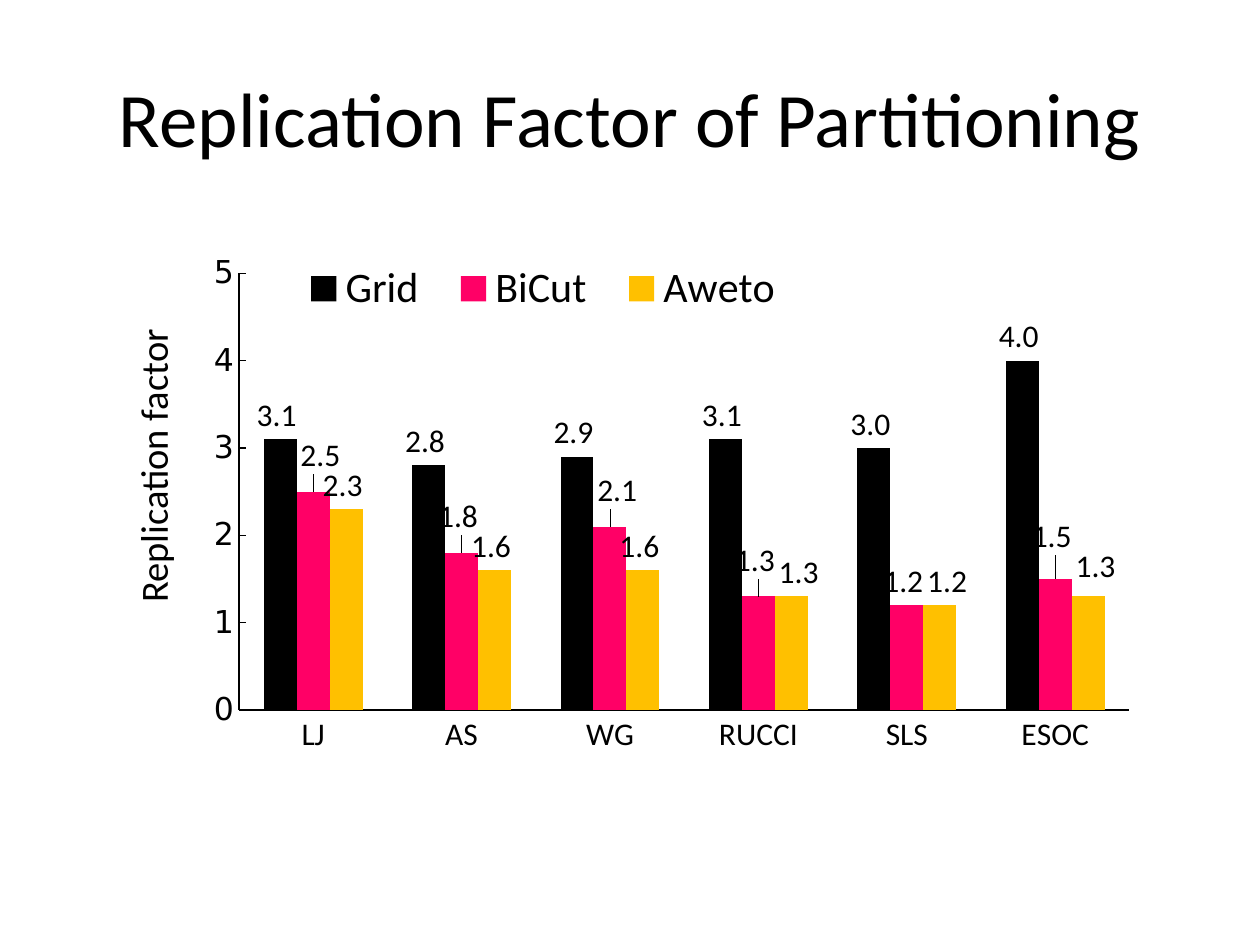
from dataclasses import dataclass
from lxml.etree import SubElement
from pptx import Presentation
from pptx.chart.data import CategoryChartData
from pptx.dml.color import RGBColor
from pptx.enum.chart import XL_CHART_TYPE, XL_LABEL_POSITION, XL_LEGEND_POSITION, XL_TICK_MARK
from pptx.enum.text import MSO_ANCHOR, PP_ALIGN
from pptx.oxml import parse_xml
from pptx.oxml.ns import nsdecls, qn
from pptx.util import Inches, Pt


@dataclass(frozen=True)
class Theme:
    font: str = "Calibri"
    number_font: str = "DejaVu Sans"
    ink: RGBColor = RGBColor(0, 0, 0)
    pink: RGBColor = RGBColor(0xFF, 0x00, 0x66)
    amber: RGBColor = RGBColor(0xFF, 0xC0, 0x00)
    title: int = 44
    legend: int = 24
    axis_title: int = 22
    label: int = 18


THEME = Theme()
GRAPHS = ["LJ", "AS", "WG", "RUCCI", "SLS", "ESOC"]
# Name, colour, values, and label shifts by point as shares of the chart
SERIES = [
    ("Grid", THEME.ink, [3.1, 2.8, 2.9, 3.1, 3.0, 4.0], {}),
    ("BiCut", THEME.pink, [2.5, 1.8, 2.1, 1.3, 1.2, 1.5],
     {0: (0.01, -0.02), 1: (0, -0.02), 2: (0.01, -0.02), 3: (0, -0.02), 5: (0, -0.03)}),
    ("Aweto", THEME.amber, [2.3, 1.6, 1.6, 1.3, 1.2, 1.3],
     {3: (0.01, 0), 4: (0.01, 0), 5: (0.01, -0.01)}),
]


def style_font(font, size, name=THEME.font):
    font.name, font.size, font.bold = name, Pt(size), False
    font.color.rgb = THEME.ink


def make_layout(**settings):
    """Build a manual chart layout from its settings, in schema order."""
    layout = parse_xml(f"<c:layout {nsdecls('c')}/>")
    manual = SubElement(layout, qn("c:manualLayout"))
    for tag, value in settings.items():
        SubElement(manual, qn(f"c:{tag}")).set("val", str(value))
    return layout


def place(element, layout, before):
    """Put the layout in front of the first child with one of the given tags."""
    for old in element.findall(qn("c:layout")):
        element.remove(old)
    next(child for child in element if child.tag in map(qn, before)).addprevious(layout)


def add_title(page, text):
    box = page.shapes.add_textbox(Inches(0.5), Inches(0.3), Inches(9), Inches(1.25))
    frame = box.text_frame
    frame.word_wrap = True
    frame.vertical_anchor = MSO_ANCHOR.MIDDLE
    para = frame.paragraphs[0]
    para.text = text
    para.alignment = PP_ALIGN.CENTER
    style_font(para.font, THEME.title)


def style_axis(axis, tick, font_name):
    axis.has_major_gridlines = False
    axis.major_tick_mark = tick
    axis.minor_tick_mark = XL_TICK_MARK.NONE
    axis.format.line.color.rgb = THEME.ink
    axis.format.line.width = Pt(0.75)
    style_font(axis.tick_labels.font, THEME.label, font_name)


def style_value_axis(axis):
    style_axis(axis, XL_TICK_MARK.INSIDE, THEME.number_font)
    axis.minimum_scale, axis.maximum_scale, axis.major_unit = 0, 5, 1
    para = axis.axis_title.text_frame.paragraphs[0]
    para.text = "Replication factor"
    style_font(para.font, THEME.axis_title)
    place(axis.axis_title._element,
          make_layout(xMode="edge", yMode="edge", x=0.03, y=0.16), ["c:overlay"])


def style_series(series, color, shifts):
    series.format.fill.solid()
    series.format.fill.fore_color.rgb = color
    labels = series.data_labels
    labels.show_value = True
    labels.number_format = r"#,##0.0_);[Red]\(#,##0.0\)"
    labels.number_format_is_linked = False
    labels.position = XL_LABEL_POSITION.OUTSIDE_END
    style_font(labels.font, THEME.label)
    for index, (x, y) in shifts.items():
        label = series.points[index].data_label
        label.position = XL_LABEL_POSITION.OUTSIDE_END
        style_font(label.font, THEME.label)
        element = labels._element.find(f"{qn('c:dLbl')}[{qn('c:idx')}][{list(shifts).index(index) + 1}]")
        element.insert(1, make_layout(x=x, y=y))


def style_legend(chart):
    chart.has_legend = True
    legend = chart.legend
    legend.position = XL_LEGEND_POSITION.RIGHT
    legend.include_in_layout = False
    style_font(legend.font, THEME.legend)
    place(legend._element,
          make_layout(xMode="edge", yMode="edge", x=0.18, y=0.06, w=0.48, h=0.09),
          ["c:overlay", "c:spPr", "c:txPr"])


def add_replication_chart(page):
    data = CategoryChartData()
    data.categories = GRAPHS
    for name, _, values, _ in SERIES:
        data.add_series(name, values)
    chart = page.shapes.add_chart(
        XL_CHART_TYPE.COLUMN_CLUSTERED, Inches(0.69), Inches(1.78),
        Inches(8.62), Inches(4.88), data).chart
    chart.has_title = False
    style_font(chart.font, THEME.label)

    # Plot area and bars
    plot = chart.plots[0]
    plot.gap_width, plot.overlap, plot.vary_by_categories = 150, 0, False
    place(chart._chartSpace.chart.plotArea,
          make_layout(layoutTarget="inner", xMode="edge", yMode="edge",
                      x=0.14, y=0.08, w=0.82, h=0.71), ["c:barChart"])
    for series, (_, color, _, shifts) in zip(plot.series, SERIES):
        style_series(series, color, shifts)

    # Axes and legend
    style_axis(chart.category_axis, XL_TICK_MARK.NONE, THEME.font)
    style_value_axis(chart.value_axis)
    style_legend(chart)


def main():
    deck = Presentation()
    deck.slide_width, deck.slide_height = Inches(10), Inches(7.5)
    page = deck.slides.add_slide(deck.slide_layouts[6])
    add_title(page, "Replication Factor of Partitioning")
    add_replication_chart(page)
    deck.save("out.pptx")


if __name__ == "__main__":
    main()
